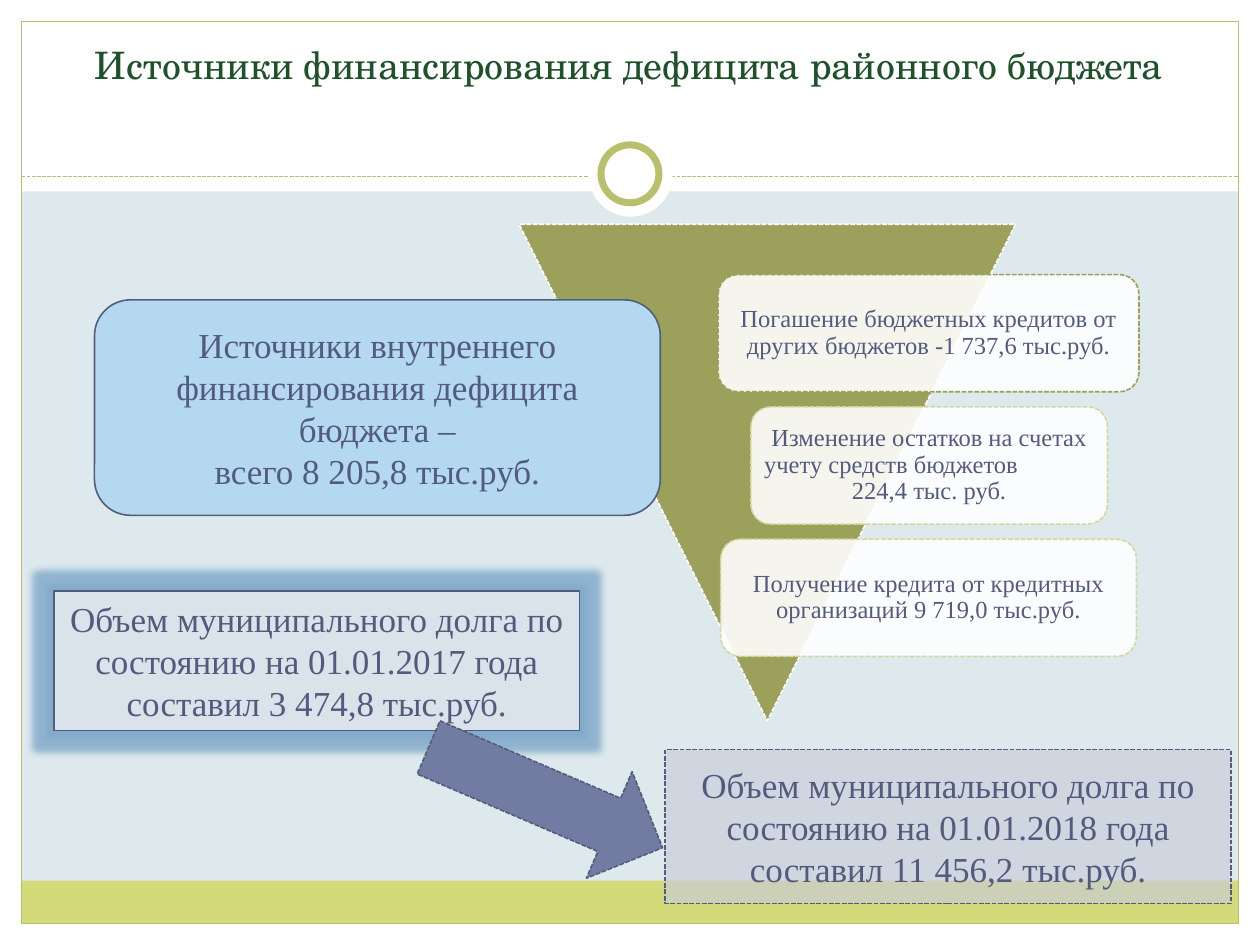
from lxml.etree import SubElement
from pptx import Presentation
from pptx.dml.color import RGBColor
from pptx.enum.dml import MSO_LINE_DASH_STYLE as Dash
from pptx.enum.shapes import MSO_CONNECTOR_TYPE as Connector, MSO_SHAPE as Shape
from pptx.enum.text import MSO_ANCHOR as Anchor, PP_ALIGN as Align
from pptx.oxml.ns import qn
from pptx.util import Emu, Pt

PX = 9144  # 100 px to the inch

WHITE = RGBColor(0xFF, 0xFF, 0xFF)
PALE_BLUE = RGBColor(0xDD, 0xE9, 0xEC)
LIME = RGBColor(0xD2, 0xDA, 0x7A)
LIME_LINE = RGBColor(0xB9, 0xC0, 0x6C)
PALE_LIME = RGBColor(0xD2, 0xD8, 0x9F)
OLIVE = RGBColor(0x9B, 0xA1, 0x5A)
DARK_GREEN = RGBColor(0x1F, 0x51, 0x2B)
SLATE = RGBColor(0x52, 0x5B, 0x7E)
SLATE_LINE = RGBColor(0x54, 0x5C, 0x79)
INDIGO = RGBColor(0x72, 0x7C, 0xA3)
SKY = RGBColor(0xB3, 0xD8, 0xEF)
LAVENDER = RGBColor(0xC7, 0xCB, 0xDA)
MIST = RGBColor(0xDB, 0xE3, 0xEA)
GLOW = "7FA8C9"

BODY = {"name": "Times New Roman", "size": Pt(20)}
CARD = {"name": "Times New Roman", "size": Pt(14)}
TITLE = {"name": "TeX Gyre Schola", "size": Pt(21.6)}


def px(*lengths):
    return [Emu(length * PX) for length in lengths]


def set_all(target, values):
    for name, value in values.items():
        setattr(target, name, value)


def set_line(line, color, width, dash=None):
    line.color.rgb = color
    line.width = Pt(width)
    if dash:
        line.dash_style = dash


def add_box(page, kind, box, fill=None, alpha=100, line=None, width=0.9, dash=None):
    shape = page.shapes.add_shape(kind, *px(*box))
    shape.shadow.inherit = False
    if fill is None:
        shape.fill.background()
    else:
        shape.fill.solid()
        shape.fill.fore_color.rgb = fill
    if alpha < 100:
        color = shape.fill._xPr.find(".//" + qn("a:srgbClr"))
        SubElement(color, qn("a:alpha"), val=str(alpha * 1000))
    if line is None:
        shape.line.fill.background()
    else:
        set_line(shape.line, line, width, dash)
    return shape


def write(shape, lines, font, color=SLATE, anchor=Anchor.MIDDLE, inset=None, spacing=1.0):
    """Fill a shape with (text, alignment) lines, one paragraph each."""
    frame = shape.text_frame
    set_all(frame, {"word_wrap": True, "vertical_anchor": anchor})
    if inset is not None:
        for side in ("left", "top", "right", "bottom"):
            setattr(frame, "margin_" + side, Emu(inset * PX))
    for index, (text, align) in enumerate(lines):
        para = frame.add_paragraph() if index else frame.paragraphs[0]
        set_all(para, {"alignment": align, "line_spacing": spacing})
        span = para.add_run()
        span.text = text
        set_all(span.font, font)
        span.font.color.rgb = color


def centred(*texts):
    return [(text, Align.CENTER) for text in texts]


def add_frame(page, box):
    """Border, header with ring, and footer band around the page."""
    left, top, width, height = box
    middle = left + width // 2
    page.background.fill.solid()
    page.background.fill.fore_color.rgb = PALE_BLUE
    edge = 17
    right, bottom = left + width - edge, top + height - edge
    for strip in ((left, bottom, width, edge), (left, top, width, 152),
                  (left, top, edge, height), (right, top, edge, height)):
        add_box(page, Shape.RECTANGLE, strip, WHITE)
    inner = width - 2 * edge
    add_box(page, Shape.RECTANGLE, (left + edge, bottom - 34, inner, 34), LIME)
    add_box(page, Shape.RECTANGLE, (left + edge, top + edge, inner, height - 2 * edge),
            line=LIME_LINE, width=0.75)
    rule_top = top + 140
    rule = page.shapes.add_connector(
        Connector.STRAIGHT, *px(left + edge, rule_top, right, rule_top))
    set_line(rule.line, LIME_LINE, 0.75, Dash.SQUARE_DOT)
    SubElement(rule._element.spPr, qn("a:effectLst"))
    for size, line in ((67, None), (46, LIME_LINE)):
        ring = (middle - size // 2, top + 138 - size // 2, size, size)
        add_box(page, Shape.OVAL, ring, WHITE, line=line, width=4)


def add_title(page, box, text):
    title = page.shapes.add_textbox(*px(*box))
    write(title, centred(text), TITLE, DARK_GREEN)


def add_sources(page, box):
    """Inverted triangle with the stack of source cards on it."""
    left, top, width, height = box
    triangle = add_box(page, Shape.ISOSCELES_TRIANGLE, box, OLIVE,
                       line=WHITE, dash=Dash.SQUARE_DOT)
    triangle.rotation = 180
    cards = [
        (334, OLIVE, centred("Погашение бюджетных кредитов от других бюджетов -1 737,6 тыс.руб.")),
        (283, PALE_LIME, [("Изменение остатков на счетах", Align.CENTER),
                          ("учету средств бюджетов", Align.LEFT),
                          ("224,4 тыс. руб.", Align.CENTER)]),
        (330, PALE_LIME, centred("Получение кредита от кредитных организаций 9 719,0 тыс.руб.")),
    ]
    axis, card_height, pitch = left + 325, 93, 105
    for row, (card_width, line, lines) in enumerate(cards):
        place = (axis - card_width // 2, top + 40 + row * pitch, card_width, card_height)
        card = add_box(page, Shape.ROUNDED_RECTANGLE, place, WHITE, 90, line,
                       dash=Dash.SQUARE_DOT)
        write(card, lines, CARD, inset=6, spacing=0.9)


def add_total(page, box):
    total = add_box(page, Shape.ROUNDED_RECTANGLE, box, SKY, line=SLATE_LINE)
    write(total, centred("Источники внутреннего финансирования дефицита бюджета –",
                         "всего 8 205,8 тыс.руб."), BODY)


def add_glow(shape, radius):
    effects = shape._element.spPr.find(qn("a:effectLst"))
    glow = SubElement(effects, qn("a:glow"), rad=str(radius * PX))
    color = SubElement(glow, qn("a:srgbClr"), val=GLOW)
    SubElement(color, qn("a:alpha"), val="80000")


def add_debt(page, box):
    """Debt at the start of two years, joined by an arrow."""
    left, top, width, height = box
    after = add_box(page, Shape.RECTANGLE, (left + width - 449, top + height - 122, 449, 122),
                    LAVENDER, 63, SLATE_LINE, dash=Dash.SQUARE_DOT)
    before = add_box(page, Shape.RECTANGLE, (left, top, 417, 111), MIST,
                     line=SLATE, width=0.75)
    add_glow(before, 11)
    for shape, year, amount, anchor in ((after, 2018, "11 456,2", Anchor.MIDDLE),
                                        (before, 2017, "3 474,8", Anchor.TOP)):
        text = (f"Объем муниципального долга по состоянию на 01.01.{year} года "
                f"составил {amount} тыс.руб.")
        write(shape, centred(text), BODY, anchor=anchor)
    arrow = add_box(page, Shape.RIGHT_ARROW, (left + 289, top + 118, 202, 92), INDIGO,
                    line=SLATE_LINE, dash=Dash.SQUARE_DOT)
    arrow.rotation = 23.2


def main():
    deck = Presentation()
    deck.slide_width, deck.slide_height = px(1000, 750)
    page = deck.slides.add_slide(deck.slide_layouts[6])
    add_frame(page, (0, 0, 1000, 750))
    add_title(page, (33, 25, 933, 53), "Источники финансирования дефицита районного бюджета")
    add_sources(page, (412, 178, 394, 394))
    add_total(page, (75, 238, 449, 171))
    add_debt(page, (43, 469, 934, 248))
    deck.save("out.pptx")


if __name__ == "__main__":
    main()
